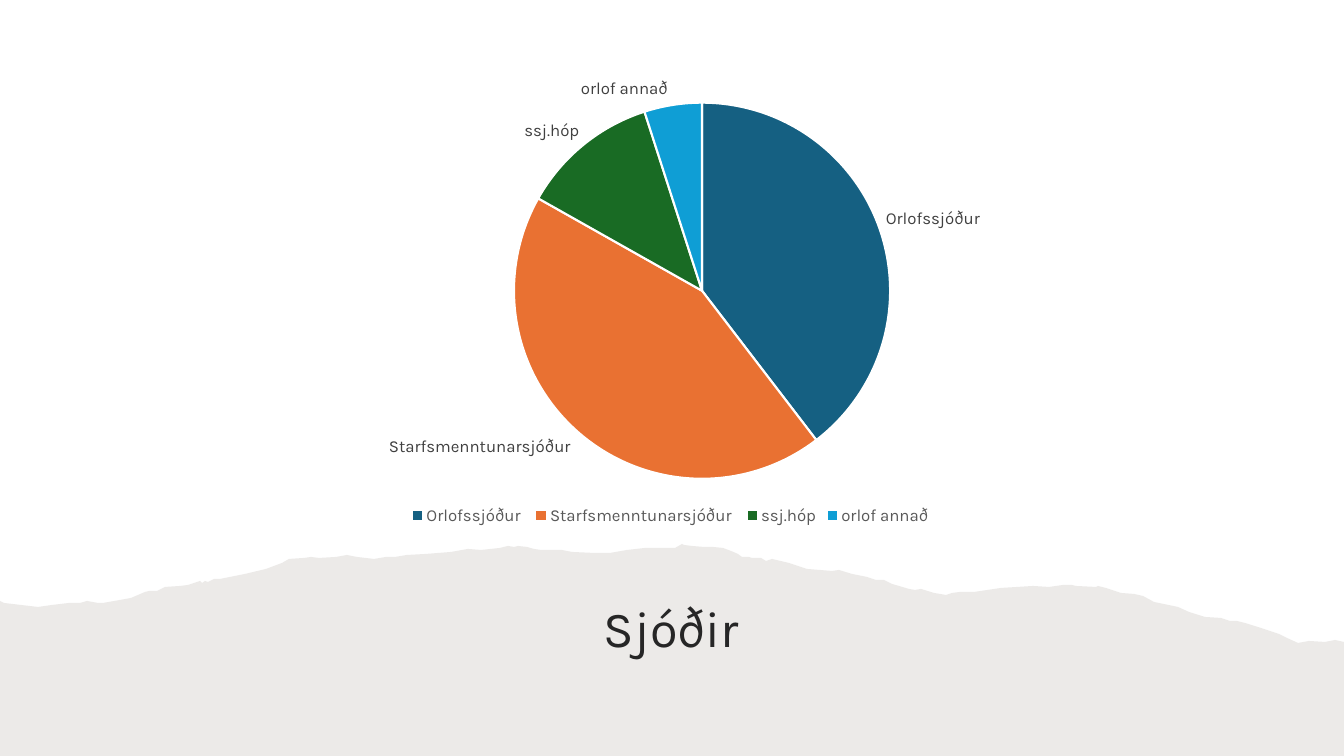
"""Build a slide with a pie chart of funds above a torn-paper title band."""
from lxml.etree import SubElement
from pptx import Presentation
from pptx.chart.data import CategoryChartData
from pptx.dml.color import RGBColor
from pptx.enum.chart import XL_CHART_TYPE, XL_LABEL_POSITION, XL_LEGEND_POSITION
from pptx.enum.text import MSO_ANCHOR, PP_ALIGN
from pptx.oxml.ns import qn
from pptx.util import Pt

PIXEL = 914400 / 100.8
SLIDE_SIZE = (1344, 756)
FONT = "Karla"
COLORS = {
    "band": "82766A", "title": "262626", "label": "404040", "legend": "595959",
    "chart": "000000", "edge": "FFFFFF",
}
BAND_OPACITY = 15
TITLE = "Sjóðir"
TITLE_BOX = (138, 582, 1067, 82)
CHART_BOX = (69, 64, 1207, 466)
FUNDS = [
    ("Orlofssjóður ", 40, "156082"),
    ("Starfsmenntunarsjóður ", 44, "E97132"),
    ("ssj.hóp", 12, "196B24"),
    ("orlof annað ", 5, "0F9ED5"),
]
RIDGE = [
    (0, 601), (4, 603), (21, 605), (38, 607), (52, 605), (69, 603), (80, 603),
    (87, 601), (98, 603), (103, 603), (120, 600), (131, 598), (145, 592),
    (149, 591), (157, 591), (165, 587), (180, 586), (188, 585), (200, 581),
    (202, 583), (205, 581), (208, 582), (214, 579), (220, 579), (245, 574),
    (266, 569), (282, 563), (289, 559), (304, 558), (311, 557), (319, 558),
    (336, 557), (347, 555), (357, 557), (374, 559), (386, 557), (395, 557),
    (407, 555), (426, 554), (451, 552), (468, 549), (481, 550), (500, 548),
    (508, 546), (514, 547), (518, 546), (527, 547), (534, 549), (541, 550),
    (562, 550), (572, 552), (594, 553), (610, 553), (627, 550), (645, 548),
    (675, 548), (682, 544), (684, 545), (692, 546), (704, 547), (713, 547),
    (723, 548), (731, 551), (738, 554), (742, 557), (749, 557), (752, 558),
    (761, 558), (766, 561), (772, 559), (789, 563), (807, 569), (832, 571),
    (839, 570), (852, 574), (867, 577), (876, 580), (884, 580), (892, 584),
    (899, 586), (909, 589), (915, 590), (921, 589), (934, 593), (946, 595),
    (952, 593), (960, 592), (974, 592), (1001, 588), (1033, 586), (1049, 587),
    (1063, 585), (1072, 585), (1076, 586), (1096, 587), (1098, 586),
    (1106, 588), (1115, 591), (1121, 593), (1134, 594), (1143, 596),
    (1154, 602), (1178, 607), (1189, 612), (1205, 617), (1221, 618),
    (1230, 621), (1237, 621), (1245, 623), (1261, 628), (1279, 634),
    (1287, 638), (1298, 643), (1309, 641), (1325, 642), (1335, 640), (1344, 642),
]


def to_emu(lengths):
    return [round(length * PIXEL) for length in lengths]


def apply(target, values):
    for name, value in values.items():
        setattr(target, name, value)


def style_font(font, size, color):
    apply(font, {"name": FONT, "size": Pt(size), "bold": False})
    font.color.rgb = RGBColor.from_string(COLORS[color])


def add_band(slide):
    width, height = SLIDE_SIZE
    builder = slide.shapes.build_freeform(*RIDGE[0], scale=PIXEL)
    builder.add_line_segments(RIDGE[1:] + [(width, height), (0, height)], close=True)
    band = builder.convert_to_shape()
    band.shadow.inherit = False
    band.fill.solid()
    band.fill.fore_color.rgb = RGBColor.from_string(COLORS["band"])
    band.line.fill.background()
    color = next(band.element.spPr.iter(qn("a:srgbClr")))
    SubElement(color, qn("a:alpha"), val=str(BAND_OPACITY * 1000))


def set_title(slide):
    title = slide.shapes.title
    apply(title, dict(zip(("left", "top", "width", "height"), to_emu(TITLE_BOX))))
    title.element.getparent().append(title.element)
    frame = title.text_frame
    apply(frame, {"text": TITLE, "vertical_anchor": MSO_ANCHOR.BOTTOM, "word_wrap": True})
    paragraph = frame.paragraphs[0]
    apply(paragraph, {"alignment": PP_ALIGN.CENTER, "line_spacing": 0.9})
    style_font(paragraph.runs[0].font, 36, "title")


def add_pie(slide):
    names, values, fills = zip(*FUNDS)
    data = CategoryChartData()
    data.categories = names
    data.add_series("Series 1", values)
    chart = slide.shapes.add_chart(XL_CHART_TYPE.PIE, *to_emu(CHART_BOX), data).chart
    apply(chart, {"has_title": False, "has_legend": True})
    style_font(chart.font, 10, "chart")
    apply(chart.legend, {"position": XL_LEGEND_POSITION.BOTTOM, "include_in_layout": False})
    style_font(chart.legend.font, 12, "legend")

    plot = chart.plots[0]
    apply(plot, {"vary_by_categories": True, "has_data_labels": True})
    apply(plot.data_labels, {
        "show_category_name": True, "show_value": False, "show_percentage": False,
        "position": XL_LABEL_POSITION.OUTSIDE_END,
    })
    style_font(plot.data_labels.font, 12, "label")
    for index, fill in enumerate(fills):
        slice_format = plot.series[0].points[index].format
        slice_format.fill.solid()
        slice_format.fill.fore_color.rgb = RGBColor.from_string(fill)
        slice_format.line.width = Pt(1.5)
        slice_format.line.color.rgb = RGBColor.from_string(COLORS["edge"])


def main():
    presentation = Presentation()
    apply(presentation, dict(zip(("slide_width", "slide_height"), to_emu(SLIDE_SIZE))))
    slide = presentation.slides.add_slide(presentation.slide_layouts[5])
    add_band(slide)
    set_title(slide)
    add_pie(slide)
    presentation.save("out.pptx")


if __name__ == "__main__":
    main()
